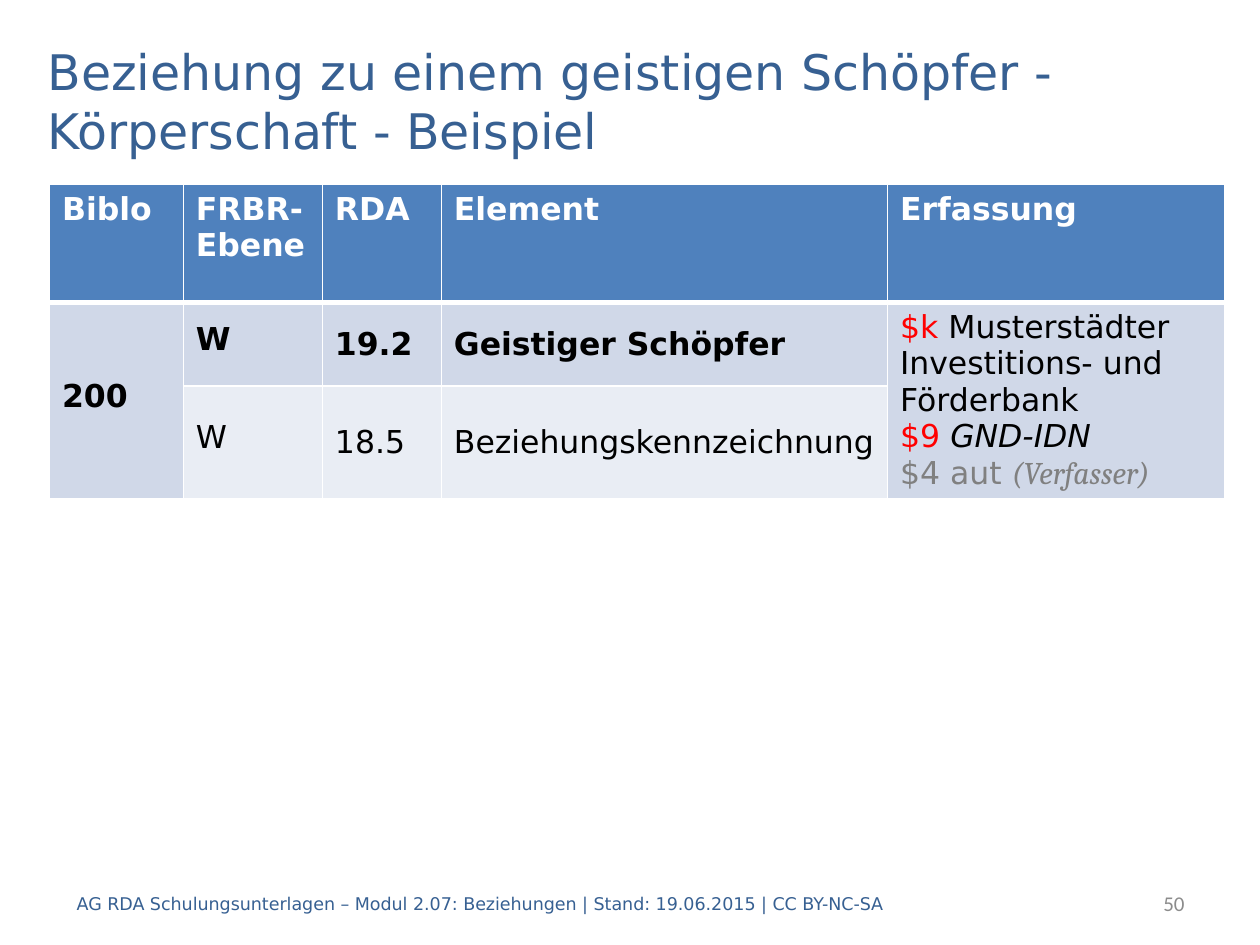
from pptx import Presentation
from pptx.dml.color import RGBColor
from pptx.enum.text import MSO_ANCHOR, MSO_AUTO_SIZE, PP_ALIGN
from pptx.oxml import parse_xml
from pptx.oxml.ns import nsdecls
from pptx.util import Pt

NAVY = RGBColor(0x37, 0x60, 0x92)
BLUE = RGBColor(0x4F, 0x81, 0xBD)
PALE = RGBColor(0xD0, 0xD8, 0xE8)
LIGHT = RGBColor(0xE9, 0xED, 0xF4)
WHITE = RGBColor(0xFF, 0xFF, 0xFF)
BLACK = RGBColor(0, 0, 0)
RED = RGBColor(0xFF, 0, 0)
GREY = RGBColor(0x80, 0x80, 0x80)
SILVER = RGBColor(0x8C, 0x8C, 0x8C)

HEADS = ["Biblo", "FRBR-Ebene", "RDA", "Element", "Erfassung"]
ROWS = [
    ("W", "19.2", "Geistiger Schöpfer", PALE, True),
    ("W", "18.5", "Beziehungskennzeichnung", LIGHT, False),
]
WIDTHS = [76.5, 79.5, 68, 255, 192.5]
HEIGHTS = [67.5, 47.5, 64.5]


class Deck:
    font = "DejaVu Sans"

    def __init__(self):
        self.prs = Presentation()
        self.prs.slide_width, self.prs.slide_height = Pt(720), Pt(540)
        self.slide = self.prs.slides.add_slide(self.prs.slide_layouts[5])

    def run(self, para, text, size, color, bold=False, italic=False, font=None):
        run = para.add_run()
        run.text = text
        style = run.font
        style.name, style.size = font or self.font, Pt(size)
        style.bold, style.italic = bold, italic
        style.color.rgb = color

    def title(self, text, left, top, width, height):
        shape = self.slide.shapes.title
        shape.left, shape.top = Pt(left), Pt(top)
        shape.width, shape.height = Pt(width), Pt(height)
        self.fill(shape.text_frame, text, 28, NAVY)

    def fill(self, frame, text, size, color, align=PP_ALIGN.LEFT, font=None):
        frame.word_wrap = True
        frame.auto_size = MSO_AUTO_SIZE.NONE
        frame.vertical_anchor = MSO_ANCHOR.MIDDLE
        para = frame.paragraphs[0]
        para.alignment = align
        self.run(para, text, size, color, font=font)

    def label(self, text, left, width, size, color, **style):
        box = self.slide.shapes.add_textbox(Pt(left), Pt(502), Pt(width), Pt(28.5))
        self.fill(box.text_frame, text, size, color, **style)

    def table(self, left, top, widths, heights):
        frame = self.slide.shapes.add_table(
            len(heights), len(widths), Pt(left), Pt(top),
            Pt(sum(widths)), Pt(sum(heights)))
        table = frame.table
        table.first_row = table.horz_banding = False
        for col, width in zip(table.columns, widths):
            col.width = Pt(width)
        for row, height in zip(table.rows, heights):
            row.height = Pt(height)
        return table

    def paint(self, cell, color, top=1, bottom=1):
        """Fill a cell and give it white borders."""
        cell.fill.solid()
        cell.fill.fore_color.rgb = color
        props = cell._tc.get_or_add_tcPr()
        for spot, (side, line) in enumerate(
                [("L", 1), ("R", 1), ("T", top), ("B", bottom)]):
            props.insert(spot, parse_xml(
                f'<a:ln{side} {nsdecls("a")} w="{Pt(line)}"><a:solidFill>'
                f'<a:srgbClr val="{WHITE}"/></a:solidFill></a:ln{side}>'))

    def cell(self, cell, runs, middle=True, tight=False):
        """Write runs of (text, color, bold, italic, font); None breaks the line."""
        cell.vertical_anchor = MSO_ANCHOR.MIDDLE if middle else MSO_ANCHOR.TOP
        para = cell.text_frame.paragraphs[0]
        if tight:
            para.line_spacing = Pt(16)
            para.space_before = para.space_after = Pt(6)
        for item in runs:
            if item is None:
                para.add_line_break()
            else:
                text, color, *style = item
                self.run(para, text, 18, color, *style)


def main():
    deck = Deck()
    deck.title("Beziehung zu einem geistigen Schöpfer - Körperschaft - Beispiel",
               20, 14.5, 680.5, 85.5)

    table = deck.table(28.25, 105.5, WIDTHS, HEIGHTS)
    for col, head in enumerate(HEADS):
        deck.paint(table.cell(0, col), BLUE, bottom=3)
        deck.cell(table.cell(0, col), [(head, WHITE, True)], middle=False)

    for row, (*texts, color, bold) in enumerate(ROWS, 1):
        top = 3 if row == 1 else 1
        for col in range(len(HEADS)):
            shade = color if 0 < col < 4 else PALE
            deck.paint(table.cell(row, col), shade, top=top)
        for col, text in enumerate(texts, 1):
            deck.cell(table.cell(row, col), [(text, BLACK, bold)], tight=col == 1)

    for col in (0, 4):
        table.cell(1, col).merge(table.cell(2, col))
    deck.cell(table.cell(1, 0), [("200", BLACK, True)], tight=True)
    deck.cell(table.cell(1, 4), [
        ("$k", RED),
        (" Musterstädter Investitions- und Förderbank", BLACK), None,
        ("$9 ", RED), ("GND-IDN", BLACK, False, True), None,
        ("$4 aut ", GREY), ("(Verfasser)", GREY, False, True, "Cambria"),
    ])

    deck.label("AG RDA Schulungsunterlagen – Modul 2.07: Beziehungen | "
               "Stand: 19.06.2015 | CC BY-NC-SA", 36.75, 481.5, 10, NAVY)
    deck.label("50", 569.5, 114.5, 12, SILVER,
               align=PP_ALIGN.RIGHT, font="Calibri")
    deck.prs.save("out.pptx")


if __name__ == "__main__":
    main()
